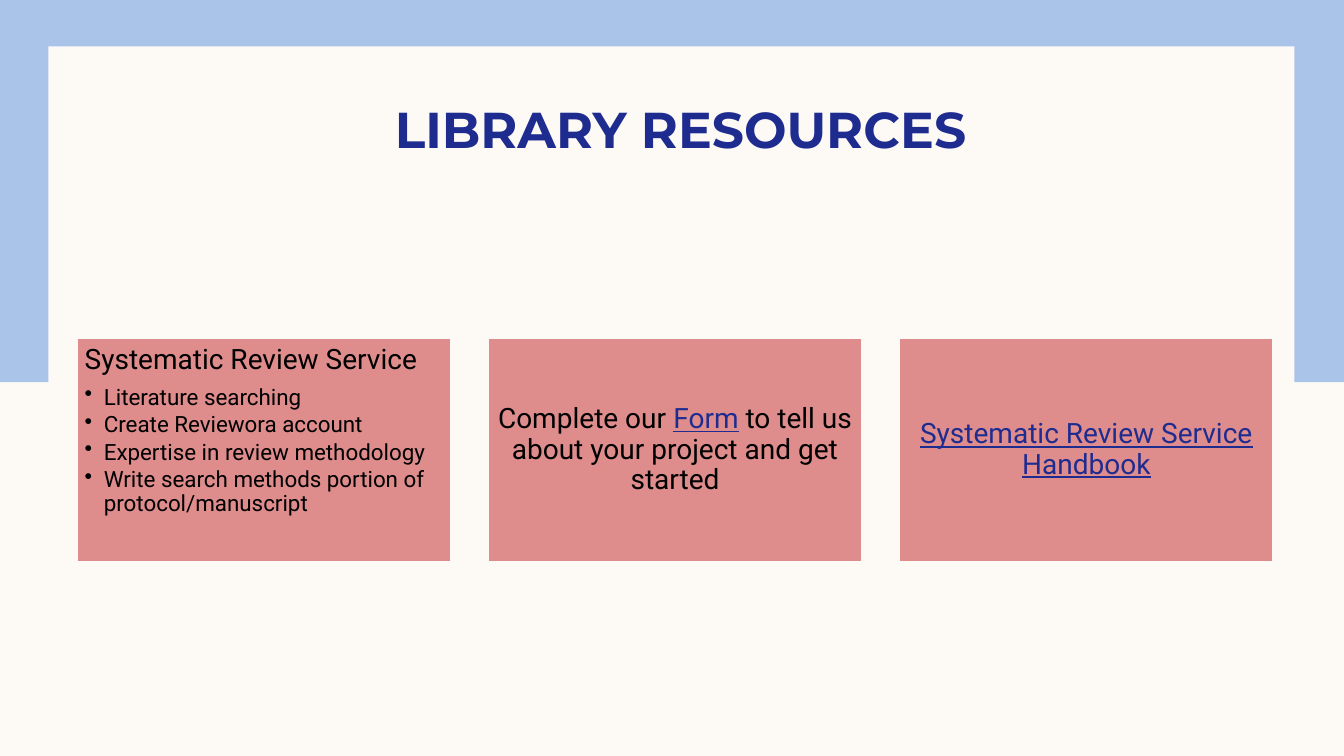
"""Build the library resources slide with three service cards."""
from dataclasses import dataclass

from lxml import etree
from pptx import Presentation
from pptx import util as u
from pptx.dml.color import RGBColor
from pptx.enum import shapes, text
from pptx.oxml import ns


@dataclass(frozen=True)
class Theme:
    cream: str = "FDFAF6"
    sky: str = "AAC3E8"
    rose: str = "DE8C8C"
    navy: str = "1F2C8F"
    black: str = "000000"
    heading_font: str = "Montserrat"
    body_font: str = "Roboto"
    title_size: int = 36
    lead_size: int = 20
    bullet_size: int = 16


THEME = Theme()
SERVICES = (
    "Literature searching",
    "Create Reviewora account",
    "Expertise in review methodology",
    "Write search methods portion of protocol/manuscript",
)
CARD_LEFT, CARD_TOP, CARD_WIDTH, CARD_HEIGHT = 0.76, 3.35, 3.71, 2.23
CARD_STEP = 4.08


def style_run(run, font, size, color, bold=False, underline=False):
    run.font.name = font
    run.font.size = u.Pt(size)
    run.font.color.rgb = RGBColor.from_string(color)
    run.font.bold = bold
    run.font.underline = underline


def add_panel(slide, left, top, width, height, color):
    panel = slide.shapes.add_shape(
        shapes.MSO_SHAPE.RECTANGLE,
        u.Inches(left), u.Inches(top), u.Inches(width), u.Inches(height))
    panel.shadow.inherit = False
    panel.fill.solid()
    panel.fill.fore_color.rgb = RGBColor.from_string(color)
    panel.line.fill.background()
    return panel


def add_backdrop(slide):
    for box in ((-0.03, 0, 13.36, 3.79, THEME.sky),
                (0.48, 0.46, 12.36, 6.59, THEME.cream)):
        panel = add_panel(slide, *box)
        slide.shapes.title.element.addprevious(panel.element)


def set_title(slide, wording):
    title = slide.shapes.title
    title.left, title.top = u.Inches(1), u.Inches(0.46)
    title.width, title.height = u.Inches(11.5), u.Inches(1.11)
    frame = title.text_frame
    frame.text = wording
    frame.auto_size = text.MSO_AUTO_SIZE.NONE
    frame.vertical_anchor = text.MSO_ANCHOR.BOTTOM
    frame.margin_left = frame.margin_right = u.Inches(0.1)
    frame.margin_top = frame.margin_bottom = 0
    heading = frame.paragraphs[0]
    heading.alignment = text.PP_ALIGN.CENTER
    style_run(heading.runs[0], THEME.heading_font, THEME.title_size,
              THEME.navy, bold=True)


def add_card(slide, column, anchor):
    card = add_panel(slide, CARD_LEFT + column * CARD_STEP, CARD_TOP,
                     CARD_WIDTH, CARD_HEIGHT, THEME.rose)
    card.line.color.rgb = RGBColor.from_string(THEME.cream)
    card.line.width = u.Pt(1.5)
    frame = card.text_frame
    frame.word_wrap = True
    frame.vertical_anchor = anchor
    frame.margin_left = frame.margin_right = u.Inches(0.08)
    frame.margin_top = frame.margin_bottom = u.Inches(0.08)
    return frame


def format_paragraph(paragraph, alignment, space_after):
    paragraph.alignment = alignment
    paragraph.line_spacing = 0.9
    paragraph.space_after = u.Pt(space_after)


def write_lead(paragraph, pieces, alignment):
    format_paragraph(paragraph, alignment, 7)
    for wording, is_link in pieces:
        run = paragraph.add_run()
        run.text = wording
        style_run(run, THEME.body_font, THEME.lead_size,
                  THEME.navy if is_link else THEME.black, underline=is_link)


def add_bullet(frame, wording):
    bullet = frame.add_paragraph()
    bullet.text = wording
    bullet.level = 1
    format_paragraph(bullet, text.PP_ALIGN.LEFT, 2.4)
    style_run(bullet.runs[0], THEME.body_font, THEME.bullet_size, THEME.black)
    properties = bullet._p.get_or_add_pPr()
    properties.set("marL", str(u.Inches(0.19)))
    properties.set("indent", str(u.Inches(-0.19)))
    etree.SubElement(properties, ns.qn("a:buChar")).set("char", "•")


def main():
    deck = Presentation()
    deck.slide_width, deck.slide_height = u.Inches(13.33), u.Inches(7.5)
    slide = deck.slides.add_slide(deck.slide_layouts.get_by_name("Title Only"))
    slide.background.fill.solid()
    slide.background.fill.fore_color.rgb = RGBColor.from_string(THEME.cream)
    add_backdrop(slide)
    set_title(slide, "LIBRARY RESOURCES")

    service = add_card(slide, 0, text.MSO_ANCHOR.TOP)
    write_lead(service.paragraphs[0], [("Systematic Review Service", False)],
               text.PP_ALIGN.LEFT)
    for wording in SERVICES:
        add_bullet(service, wording)

    invitations = (
        [("Complete our ", False), ("Form", True),
         (" to tell us about your project and get started", False)],
        [("Systematic Review Service Handbook", True)],
    )
    for column, pieces in enumerate(invitations, start=1):
        invitation = add_card(slide, column, text.MSO_ANCHOR.MIDDLE)
        write_lead(invitation.paragraphs[0], pieces, text.PP_ALIGN.CENTER)

    deck.save("out.pptx")


if __name__ == "__main__":
    main()
